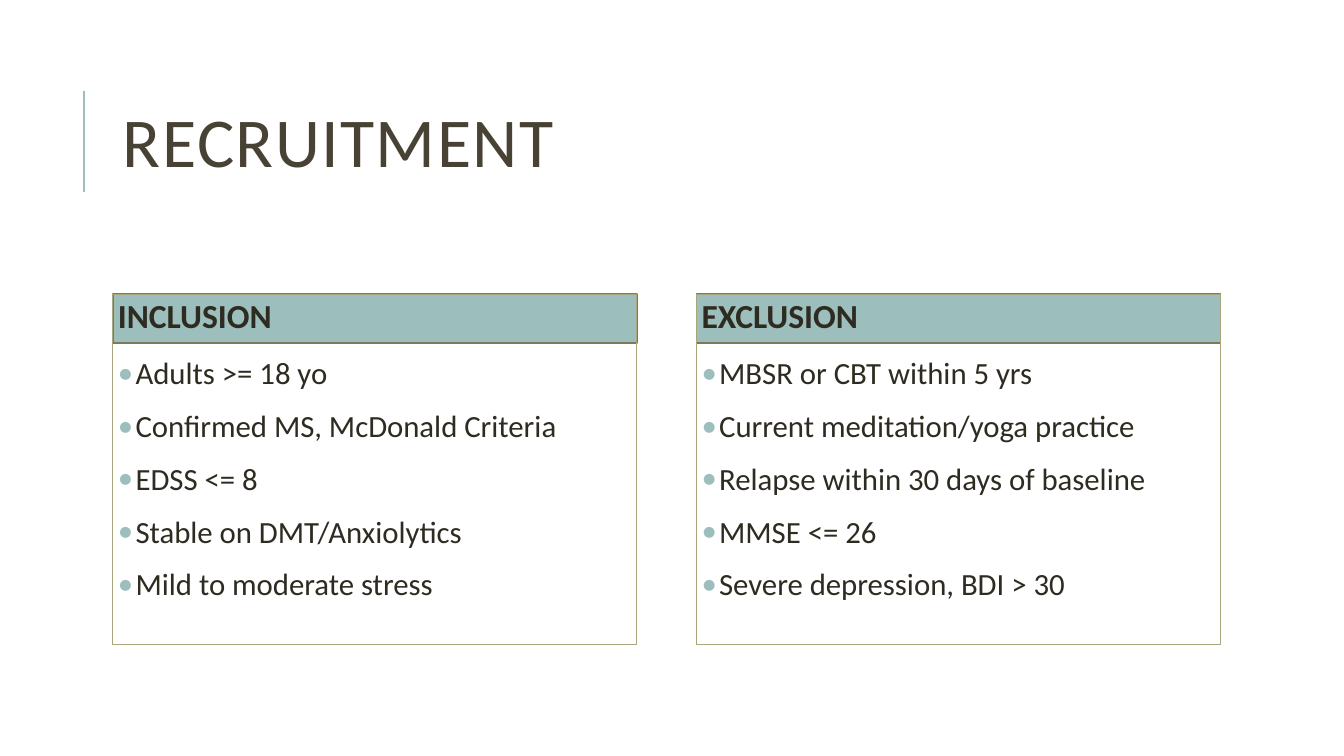
from lxml import etree
from pptx import Presentation
from pptx.dml.color import RGBColor
from pptx.enum import shapes, text
from pptx.oxml import ns
from pptx.util import Pt

TEAL = RGBColor(0x9C, 0xBE, 0xBD)
OLIVE = RGBColor(0x7D, 0x7A, 0x5C)
KHAKI = RGBColor(0xA9, 0xA5, 0x7C)
TITLE_BROWN = RGBColor(0x47, 0x42, 0x33)
TEXT_BROWN = RGBColor(0x2E, 0x2B, 0x21)
FONT = "Calibri"

LEFT = 80.64
PANEL_TOP, PANEL_WIDTH, PANEL_HEIGHT = 210.24, 374.4, 249.84
PANEL_STEP = 416.88
HEADER_HEIGHT = 34.56
INSET = 3.6
BULLET_INDENT = 12.6

CRITERIA = {
    "INCLUSION": [
        "Adults >= 18 yo",
        "Confirmed MS, McDonald Criteria",
        "EDSS <= 8",
        "Stable on DMT/Anxiolytics",
        "Mild to moderate stress",
    ],
    "EXCLUSION": [
        "MBSR or CBT within 5 yrs",
        "Current meditation/yoga practice",
        "Relapse within 30 days of baseline",
        "MMSE <= 26",
        "Severe depression, BDI > 30",
    ],
}


def add_run(paragraph, words, size, color, bold=False):
    run = paragraph.add_run()
    run.text = words
    run.font.name = FONT
    run.font.size = Pt(size)
    run.font.bold = bold
    run.font.color.rgb = color
    return run


def add_box(slide, left, top, width, height, line, line_width, fill=None):
    box = slide.shapes.add_shape(shapes.MSO_SHAPE.RECTANGLE,
                                 Pt(left), Pt(top), Pt(width), Pt(height))
    box.shadow.inherit = False
    if fill is None:
        box.fill.background()
    else:
        box.fill.solid()
        box.fill.fore_color.rgb = fill
    box.line.color.rgb = line
    box.line.width = Pt(line_width)
    return box


def set_bullet(paragraph):
    properties = paragraph._p.get_or_add_pPr()
    properties.set("marL", str(Pt(BULLET_INDENT)))
    properties.set("indent", str(-Pt(BULLET_INDENT)))
    color = etree.SubElement(properties, ns.qn("a:buClr"))
    etree.SubElement(color, ns.qn("a:srgbClr")).set("val", str(TEAL))
    etree.SubElement(properties, ns.qn("a:buFont")).set("typeface", FONT)
    etree.SubElement(properties, ns.qn("a:buChar")).set("char", "•")


def add_title(slide, left, top, width, height):
    title = slide.shapes.title
    title.left, title.top = Pt(left), Pt(top)
    title.width, title.height = Pt(width), Pt(height)
    frame = title.text_frame
    frame.word_wrap = True
    frame.vertical_anchor = text.MSO_ANCHOR.MIDDLE
    heading = frame.paragraphs[0]
    heading.alignment = text.PP_ALIGN.LEFT
    heading.line_spacing = 0.8
    run = add_run(heading, "RECRUITMENT", 50, TITLE_BROWN)
    run.font._element.set("spc", "100")

    rule_x = Pt(left - 20.88)
    rule = slide.shapes.add_connector(shapes.MSO_CONNECTOR.STRAIGHT,
                                      rule_x, Pt(top + 90.72), rule_x, Pt(top + 18.72))
    rule.line.color.rgb = TEAL
    rule.line.width = Pt(1.5)
    etree.SubElement(rule._element.spPr, ns.qn("a:effectLst"))


def add_criteria_panel(slide, left, top, width, height, heading, criteria):
    """Draw a header band and an outlined list whose first line lies on the band."""
    add_box(slide, left, top, width, HEADER_HEIGHT, OLIVE, 1.25, TEAL)
    panel = add_box(slide, left, top, width, height, KHAKI, 0.75)
    frame = panel.text_frame
    frame.word_wrap = True
    frame.vertical_anchor = text.MSO_ANCHOR.TOP
    frame.margin_left = frame.margin_right = Pt(INSET)
    frame.margin_top = frame.margin_bottom = Pt(INSET)

    for index, words in enumerate([heading, *criteria]):
        paragraph = frame.paragraphs[0] if index == 0 else frame.add_paragraph()
        paragraph.alignment = text.PP_ALIGN.LEFT
        paragraph.line_spacing = 0.9
        paragraph.space_before = Pt(14 if index == 1 else 12)
        paragraph.space_after = Pt(2)
        if index == 0:
            add_run(paragraph, words, 24, TEXT_BROWN, bold=True)
        else:
            set_bullet(paragraph)
            add_run(paragraph, words, 22, TEXT_BROWN)


def main():
    deck = Presentation()
    deck.slide_width, deck.slide_height = Pt(960), Pt(540)
    slide = deck.slides.add_slide(deck.slide_layouts[5])
    add_title(slide, LEFT, 46.08, 765.36, 118.08)
    for column, (heading, criteria) in enumerate(CRITERIA.items()):
        add_criteria_panel(slide, LEFT + column * PANEL_STEP, PANEL_TOP,
                           PANEL_WIDTH, PANEL_HEIGHT, heading, criteria)
    deck.save("out.pptx")


if __name__ == "__main__":
    main()
